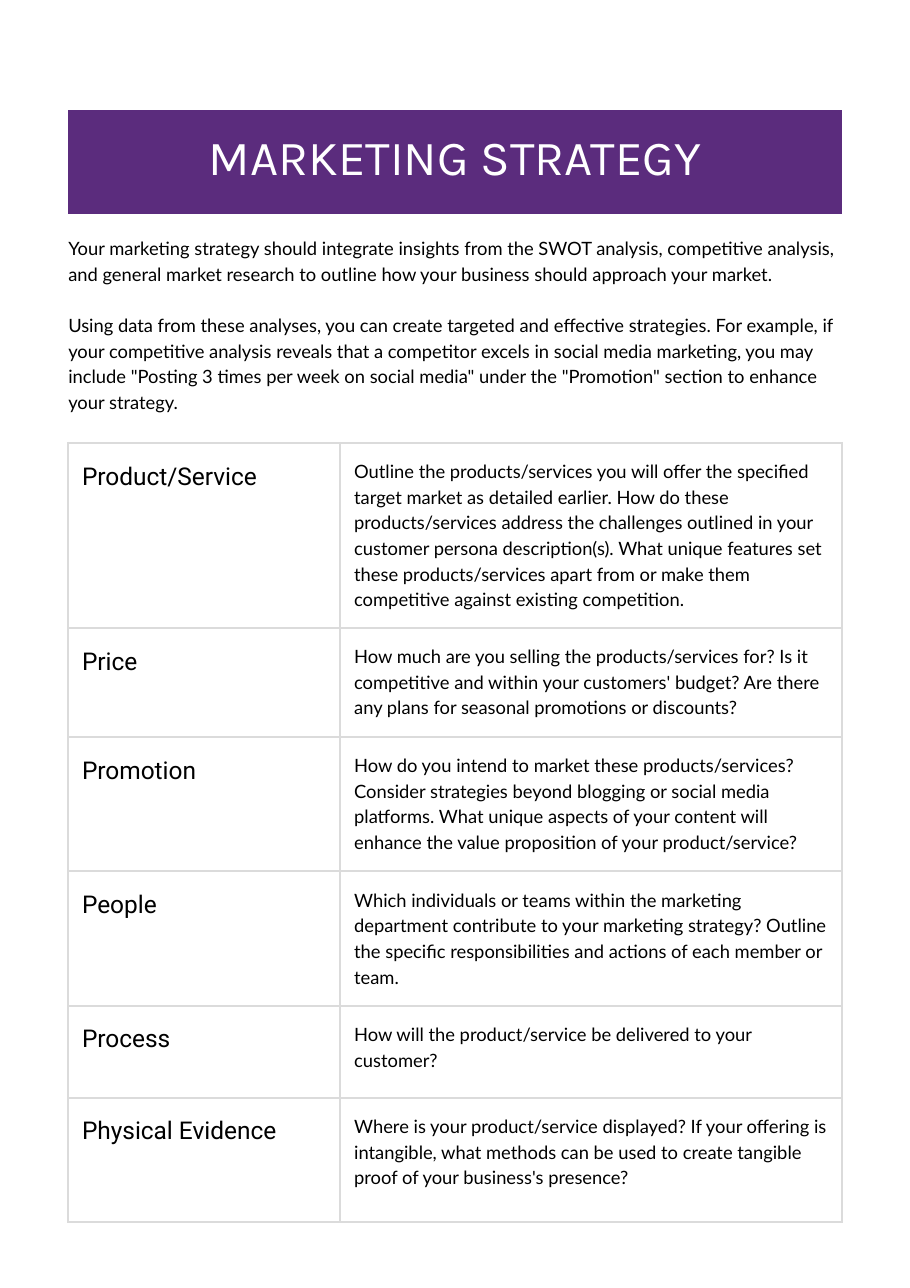
import lxml.etree
import pptx
import pptx.dml.color
import pptx.enum.text
import pptx.oxml.ns
import pptx.util

EMU_PER_PX = 4572
LEFT, WIDTH = 124, 1405
PURPLE, GREY, GREEN, BLACK, WHITE = "5B2C7D", "DBDBDB", "1BB445", "000000", "FFFFFF"
LINE_FACTOR = 1.4
COLUMN_WIDTHS = [494, 911]
BORDER_TAGS = ("a:lnL", "a:lnR", "a:lnT", "a:lnB")

TITLE_FORMAT = {"name": "Karla", "size": pptx.util.Pt(32)}
LABEL_FORMAT = {"name": "Roboto", "size": pptx.util.Pt(16)}
BODY_FORMAT = {"name": "Lato", "size": pptx.util.Pt(12)}

INTRO = [
    "Your marketing strategy should integrate insights from the SWOT analysis, competitive analysis, "
    "and general market research to outline how your business should approach your market.",
    "Using data from these analyses, you can create targeted and effective strategies. For example, if "
    "your competitive analysis reveals that a competitor excels in social media marketing, you may "
    'include "Posting 3 times per week on social media" under the "Promotion" section to enhance '
    "your strategy.",
]

STRATEGY_ROWS = [
    (336, "Product/Service",
     "Outline the products/services you will offer the specified target market as detailed earlier. "
     "How do these products/services address the challenges outlined in your customer persona "
     "description(s). What unique features set these products/services apart from or make them "
     "competitive against existing competition."),
    (198, "Price",
     "How much are you selling the products/services for? Is it competitive and within your "
     "customers' budget? Are there any plans for seasonal promotions or discounts?"),
    (244, "Promotion",
     "How do you intend to market these products/services? Consider strategies beyond blogging or "
     "social media platforms. What unique aspects of your content will enhance the value "
     "proposition of your product/service?"),
    (244, "People",
     "Which individuals or teams within the marketing department contribute to your marketing "
     "strategy? Outline the specific responsibilities and actions of each member or team."),
    (167, "Process",
     "How will the product/service be delivered to your customer?"),
    (226, "Physical Evidence",
     "Where is your product/service displayed? If your offering is intangible, what methods can be "
     "used to create tangible proof of your business's presence?"),
]


def px(length):
    """Turn whole px into EMU."""
    return pptx.util.Emu(length * EMU_PER_PX)


def color(value):
    """Turn a hex string into a colour."""
    return pptx.dml.color.RGBColor.from_string(value)


def set_all(target, values):
    """Set every attribute in a dict on an object."""
    for name, value in values.items():
        setattr(target, name, value)


def margins(inset):
    """Return equal margins for a cell or a text frame."""
    return {f"margin_{side}": px(inset) for side in ("left", "top", "right", "bottom")}


def write(paragraph, text, font_format, font_color=BLACK):
    """Fill a paragraph with one formatted run and exact line spacing."""
    run = paragraph.add_run()
    run.text = text
    set_all(run.font, font_format)
    run.font.color.rgb = color(font_color)
    paragraph.line_spacing = pptx.util.Pt(font_format["size"].pt * LINE_FACTOR)


def set_borders(cell, colors, points):
    """Draw the left, right, top and bottom lines of a cell."""
    properties = cell._tc.get_or_add_tcPr()
    width = str(int(pptx.util.Pt(points)))
    for index, (tag, line_color) in enumerate(zip(BORDER_TAGS, colors)):
        line = lxml.etree.Element(pptx.oxml.ns.qn(tag), w=width)
        fill = lxml.etree.SubElement(line, pptx.oxml.ns.qn("a:solidFill"))
        lxml.etree.SubElement(fill, pptx.oxml.ns.qn("a:srgbClr"), val=line_color)
        properties.insert(index, line)


def add_plain_table(slide, left, top, column_widths, row_heights):
    """Add a table without banding and size its columns and rows."""
    table = slide.shapes.add_table(
        len(row_heights), len(column_widths), px(left), px(top),
        px(sum(column_widths)), px(sum(row_heights))).table
    set_all(table, {"first_row": False, "horz_banding": False})
    for column, width in zip(table.columns, column_widths):
        column.width = px(width)
    for row, height in zip(table.rows, row_heights):
        row.height = px(height)
    return table


def add_banner(slide, left, top, width, height):
    """Place the heading in a filled one-cell table."""
    cell = add_plain_table(slide, left, top, [width], [height]).cell(0, 0)
    set_all(cell, margins(16))
    cell.fill.solid()
    cell.fill.fore_color.rgb = color(PURPLE)
    set_borders(cell, (WHITE, WHITE, WHITE, GREEN), 0)
    paragraph = cell.text_frame.paragraphs[0]
    paragraph.alignment = pptx.enum.text.PP_ALIGN.CENTER
    write(paragraph, "MARKETING STRATEGY", TITLE_FORMAT, WHITE)


def add_intro(slide, left, top, width, height):
    """Place the introductory paragraphs one line apart."""
    frame = slide.shapes.add_textbox(px(left), px(top), px(width), px(height)).text_frame
    set_all(frame, {
        **margins(0),
        "word_wrap": True,
        "auto_size": pptx.enum.text.MSO_AUTO_SIZE.SHAPE_TO_FIT_TEXT,
    })
    for index, text in enumerate(INTRO):
        paragraph = frame.add_paragraph() if index else frame.paragraphs[0]
        write(paragraph, text, BODY_FORMAT)
        if index:
            paragraph.space_before = paragraph.line_spacing


def add_strategy_table(slide, left, top):
    """Place the table of marketing topics and their guiding questions."""
    heights = [row[0] for row in STRATEGY_ROWS]
    table = add_plain_table(slide, left, top, COLUMN_WIDTHS, heights)
    for row, (_, *texts) in zip(table.rows, STRATEGY_ROWS):
        for cell, text, font_format in zip(row.cells, texts, (LABEL_FORMAT, BODY_FORMAT)):
            set_all(cell, margins(25))
            cell.fill.background()
            set_borders(cell, [GREY] * len(BORDER_TAGS), 1.5)
            write(cell.text_frame.paragraphs[0], text, font_format)


def main():
    """Build and save the presentation."""
    presentation = pptx.Presentation()
    set_all(presentation, {"slide_width": px(1652), "slide_height": px(2338)})
    slide = presentation.slides.add_slide(presentation.slide_layouts.get_by_name("Blank"))
    add_banner(slide, LEFT, 200, WIDTH, 188)
    add_intro(slide, LEFT, 424, WIDTH, 364)
    add_strategy_table(slide, LEFT, 804)
    presentation.save("out.pptx")


if __name__ == "__main__":
    main()
